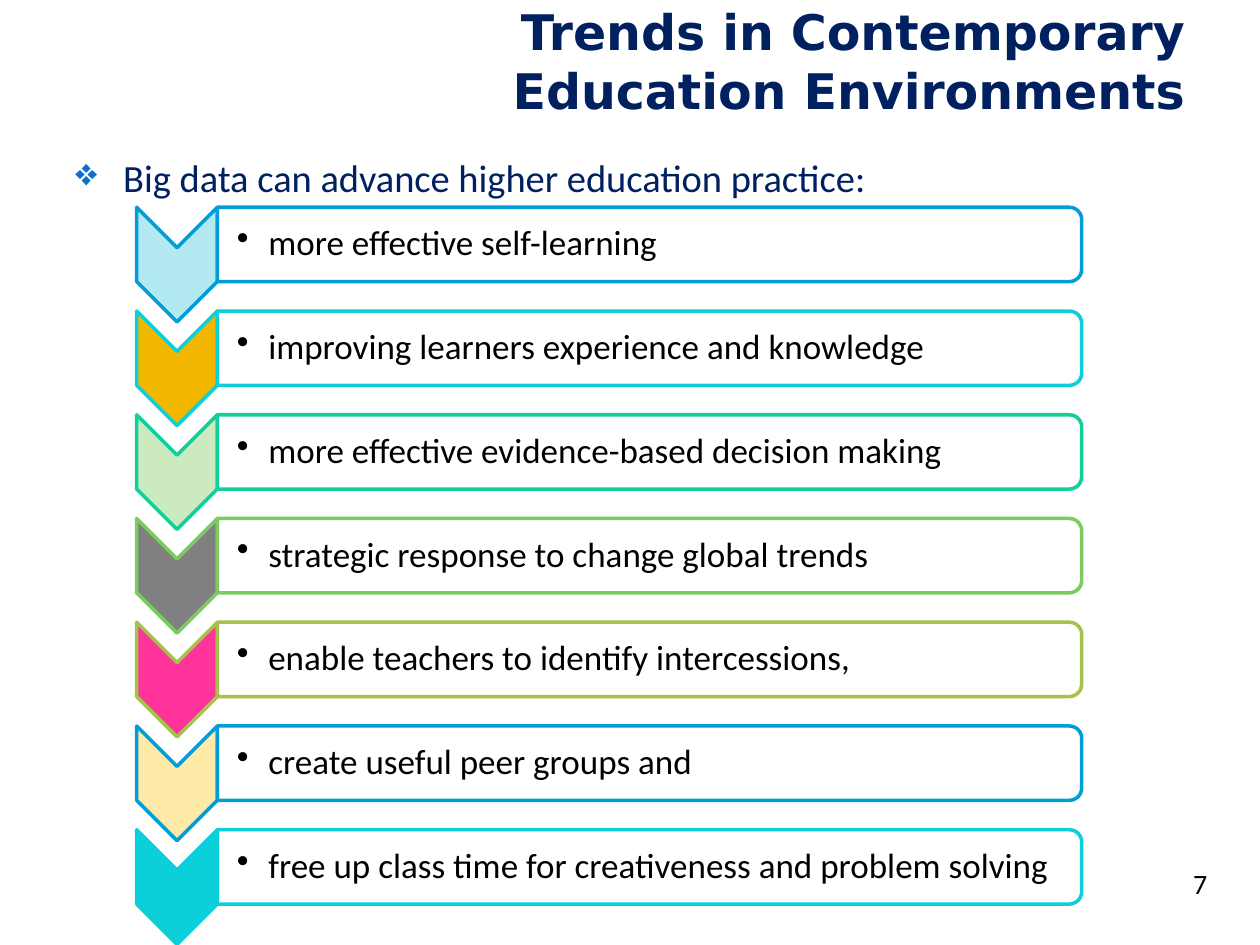
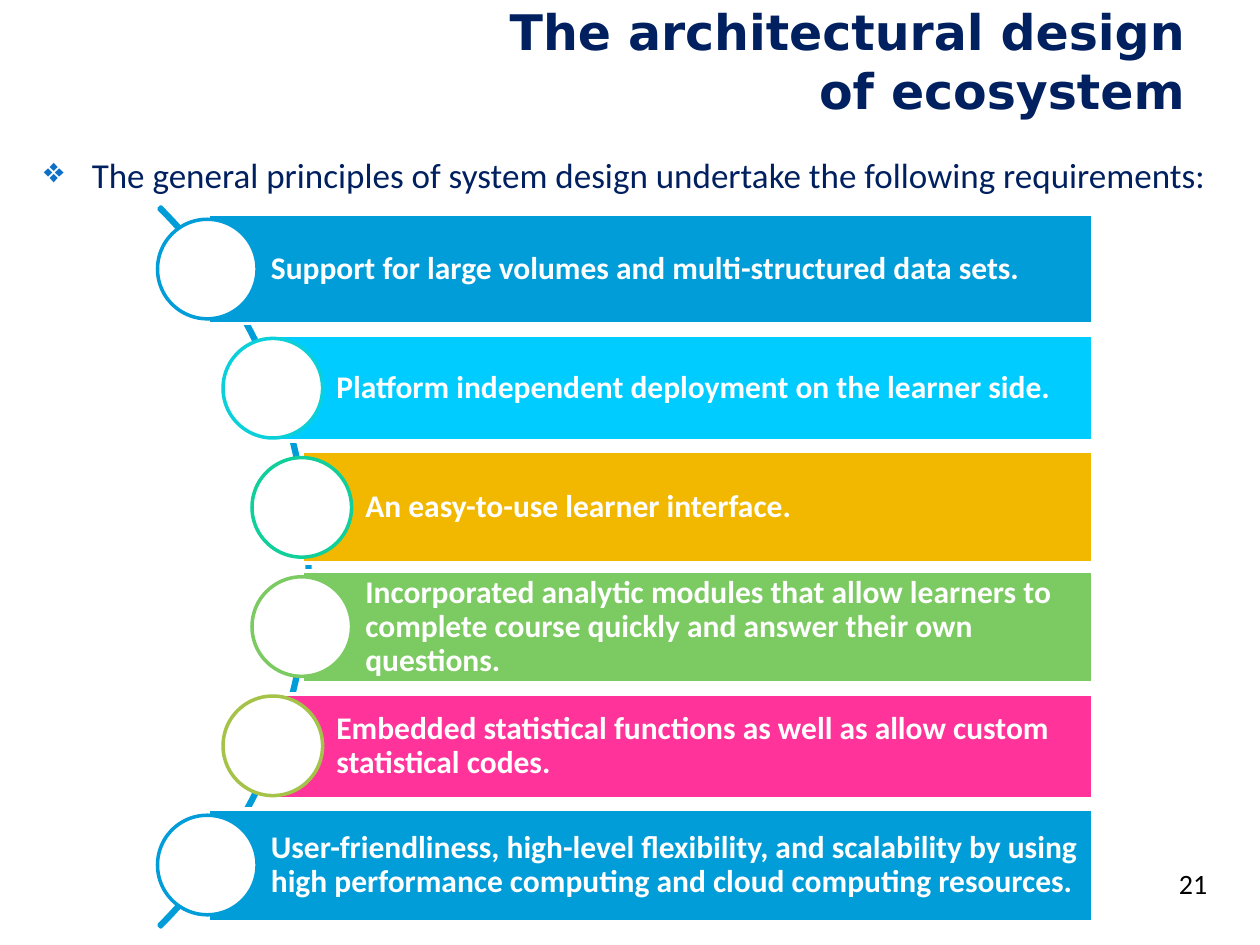
from lxml.etree import SubElement
from pptx import Presentation
from pptx.dml.color import RGBColor
from pptx.enum.shapes import MSO_SHAPE
from pptx.enum.text import MSO_ANCHOR, PP_ALIGN
from pptx.oxml.ns import qn
from pptx.util import Inches, Pt

NAVY = RGBColor(0x00, 0x20, 0x60)
BULLET_BLUE = RGBColor(0x0F, 0x6F, 0xC6)
BLUE = RGBColor(0x00, 0x9D, 0xD9)
TURQUOISE = RGBColor(0x0B, 0xD0, 0xD9)
TEAL = RGBColor(0x10, 0xCF, 0x9B)
GREEN = RGBColor(0x7C, 0xCA, 0x62)
OLIVE = RGBColor(0xA5, 0xC2, 0x49)
PALE_TURQUOISE = RGBColor(0xB3, 0xEA, 0xF2)
GOLD = RGBColor(0xF2, 0xB8, 0x00)
PALE_GREEN = RGBColor(0xCB, 0xEA, 0xC0)
GRAY = RGBColor(0x80, 0x80, 0x80)
PINK = RGBColor(0xFF, 0x33, 0x99)
CREAM = RGBColor(0xFF, 0xEA, 0xA7)
CYAN = RGBColor(0x00, 0xCC, 0xFF)
WHITE = RGBColor(0xFF, 0xFF, 0xFF)
BLACK = RGBColor(0x00, 0x00, 0x00)
BODY_FONT = "Calibri"
TITLE_FONT = "DejaVu Sans"


def add_outlined(slide, preset, left, top, width, height, fill, outline):
    shape = slide.shapes.add_shape(
        preset, Inches(left), Inches(top), Inches(width), Inches(height))
    shape.shadow.inherit = False
    if fill is None:
        shape.fill.background()
    else:
        shape.fill.solid()
        shape.fill.fore_color.rgb = fill
    shape.line.color.rgb = outline
    shape.line.width = Pt(2)
    return shape


def write(shape, text, size, color, font=BODY_FONT, bold=False, align=PP_ALIGN.LEFT,
          anchor=MSO_ANCHOR.MIDDLE, bullet=None, bullet_color=None, indent=0):
    frame = shape.text_frame
    frame.word_wrap = True
    frame.vertical_anchor = anchor
    paragraph = frame.paragraphs[0]
    paragraph.text = text
    paragraph.alignment = align
    if bullet:
        properties = paragraph._p.get_or_add_pPr()
        properties.set("marL", str(Inches(indent)))
        properties.set("indent", str(-Inches(indent)))
        if bullet_color:
            color_choice = SubElement(properties, qn("a:buClr"))
            SubElement(color_choice, qn("a:srgbClr")).set("val", str(bullet_color))
        SubElement(properties, qn("a:buChar")).set("char", bullet)
    paragraph.font.name = font
    paragraph.font.size = Pt(size)
    paragraph.font.bold = bold
    paragraph.font.color.rgb = color
    return frame


prs = Presentation()
prs.slide_width = Inches(10)
prs.slide_height = Inches(7.5)

headings = [
    ("Trends in Contemporary Education Environments", 2.08,
     "Big data can advance higher education practice:", 22, (0.5, 1.17, 9.17, 0.47),
     "7", 0.32),
    ("The architectural design of ecosystem", 3.5,
     "The general principles of system design undertake the following requirements:",
     20, (0.25, 1.17, 9.58, 5.74), "21", 0.43),
]
slides = []
for title, title_left, lead, lead_size, lead_box, number, number_width in headings:
    slide = prs.slides.add_slide(prs.slide_layouts[6])
    slides.append(slide)
    title_box = slide.shapes.add_textbox(
        Inches(title_left), Inches(0.17), Inches(9.5 - title_left), Inches(0.62))
    write(title_box, title, 28, NAVY, font=TITLE_FONT, bold=True, align=PP_ALIGN.RIGHT)
    lead_in = slide.shapes.add_textbox(*[Inches(length) for length in lead_box])
    write(lead_in, lead, lead_size, NAVY, anchor=MSO_ANCHOR.TOP,
          bullet="❖", bullet_color=BULLET_BLUE, indent=0.38)
    page_number = slide.shapes.add_textbox(
        Inches(9.68 - number_width), Inches(6.83), Inches(number_width), Inches(0.37))
    write(page_number, number, 16, BLACK, align=PP_ALIGN.RIGHT,
          anchor=MSO_ANCHOR.TOP).word_wrap = False

trends_slide, design_slide = slides

benefits = [
    ("more effective self-learning", PALE_TURQUOISE, BLUE),
    ("improving learners experience and knowledge", GOLD, TURQUOISE),
    ("more effective evidence-based decision making", PALE_GREEN, TEAL),
    ("strategic response to change global trends", GRAY, GREEN),
    ("enable teachers to identify intercessions,", PINK, OLIVE),
    ("create useful peer groups and", CREAM, BLUE),
    ("free up class time for creativeness and problem solving", TURQUOISE, TURQUOISE),
]
benefit_pitch = 4.94 / 6
for row, (benefit, fill, outline) in enumerate(benefits):
    offset = row * benefit_pitch
    chevron = add_outlined(trends_slide, MSO_SHAPE.CHEVRON,
                           0.95, 1.78 + offset, 0.91, 0.64, fill, outline)
    panel = add_outlined(trends_slide, MSO_SHAPE.ROUND_2_SAME_RECTANGLE,
                         4.86, -1.49 + offset, 0.59, 6.86, WHITE, outline)
    chevron.rotation = panel.rotation = 90
    label = trends_slide.shapes.add_textbox(
        Inches(1.72), Inches(1.67 + offset), Inches(6.83), Inches(0.54))
    frame = write(label, benefit, 20, BLACK, bullet="•", indent=0.25)
    frame.margin_left = Inches(0.16)
    frame.margin_top = frame.margin_right = frame.margin_bottom = Inches(0.01)
    frame.paragraphs[0].line_spacing = 0.9

arc = add_outlined(design_slide, MSO_SHAPE.BLOCK_ARC, -5.62, 0.46, 8.08, 8.08, None, BLUE)
for index, value in enumerate((189, 27, 0.27 / 100)):
    arc.adjustments[index] = value

requirements = [
    ("Support for large volumes and multi-structured data sets.",
     1.65, 1.7, 0.87, BLUE, BLUE),
    ("Platform independent deployment on the learner side.",
     2.17, 2.66, 0.84, CYAN, TURQUOISE),
    ("An easy-to-use learner interface.",
     2.4, 3.58, 0.89, GOLD, TEAL),
    ("Incorporated analytic modules that allow learners to complete course quickly "
     "and answer their own questions.",
     2.4, 4.53, 0.89, GREEN, GREEN),
    ("Embedded statistical functions as well as allow custom statistical codes.",
     2.17, 5.51, 0.83, PINK, OLIVE),
    ("User-friendliness, high-level flexibility, and scalability by using high "
     "performance computing and cloud computing resources.",
     1.65, 6.42, 0.9, BLUE, BLUE),
]
bar_right = 8.67
circle_pitch = 4.73 / 5
for row, (requirement, left, top, height, fill, ring) in enumerate(requirements):
    bar = add_outlined(design_slide, MSO_SHAPE.RECTANGLE,
                       left, top, bar_right - left, height, fill, WHITE)
    frame = write(bar, requirement, 18, WHITE, bold=True)
    frame.margin_left = Inches(0.5)
    frame.margin_top = frame.margin_right = frame.margin_bottom = Inches(0.05)
    frame.paragraphs[0].line_spacing = 0.9
    add_outlined(design_slide, MSO_SHAPE.OVAL,
                 left - 0.4, 1.74 + row * circle_pitch, 0.79, 0.79, WHITE, ring)

prs.save("out.pptx")
